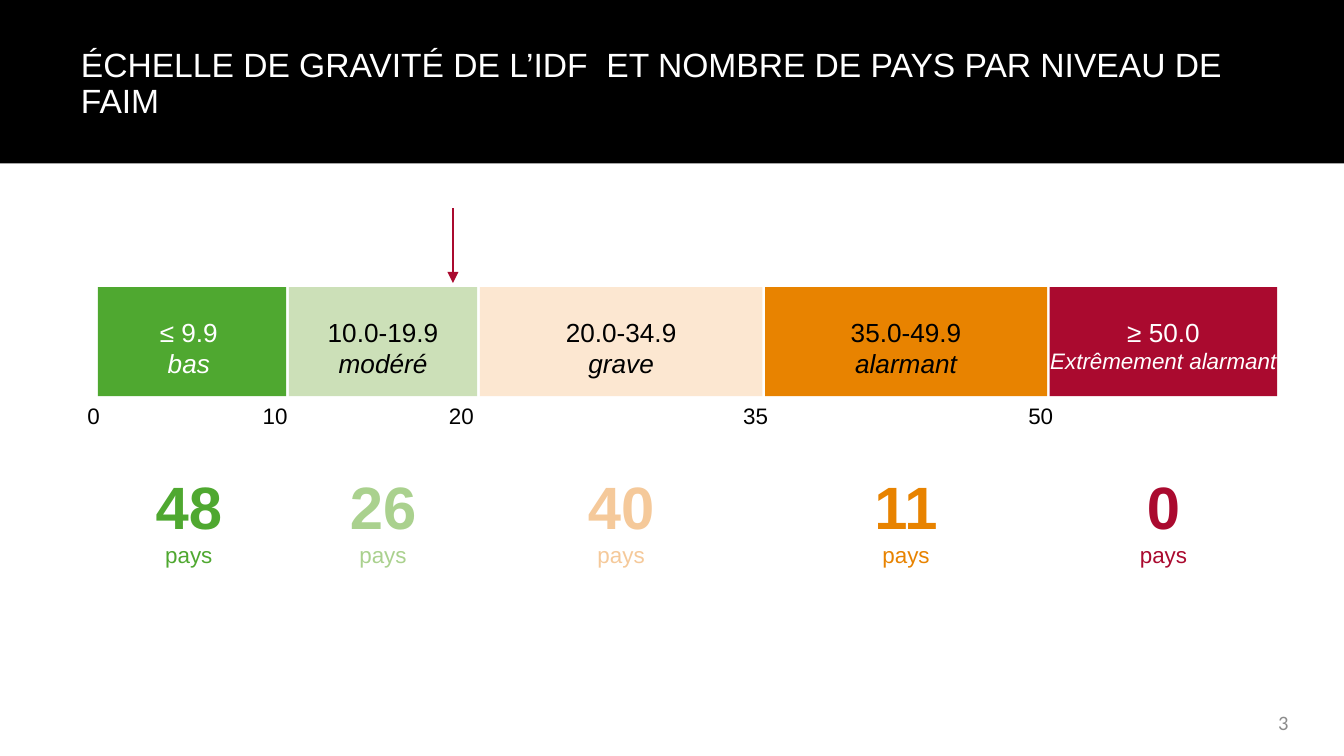
from dataclasses import dataclass

import pptx
import pptx.dml.color
import pptx.enum.shapes
import pptx.enum.text
import pptx.oxml
import pptx.oxml.ns
import pptx.util

Cm = pptx.util.Cm
Pt = pptx.util.Pt
RGBColor = pptx.dml.color.RGBColor
ALIGN = pptx.enum.text.PP_ALIGN
ANCHOR = pptx.enum.text.MSO_ANCHOR

BLACK = RGBColor(0x00, 0x00, 0x00)
WHITE = RGBColor(0xFF, 0xFF, 0xFF)
GRAY = RGBColor(0x8C, 0x8C, 0x8C)
GREEN = RGBColor(0x4F, 0xA8, 0x30)
PALE_GREEN = RGBColor(0xCC, 0xE0, 0xB8)
MID_GREEN = RGBColor(0xAA, 0xD1, 0x8E)
PEACH = RGBColor(0xFC, 0xE7, 0xD1)
DEEP_PEACH = RGBColor(0xF5, 0xC9, 0x9A)
ORANGE = RGBColor(0xE8, 0x83, 0x00)
CRIMSON = RGBColor(0xAA, 0x0A, 0x2F)

SLIDE_W, SLIDE_H = 25.4, 14.29
SCALE_LEFT, SCALE_TOP, BAND_H, GAP = 1.85, 5.43, 2.06, 0.05
LABEL_TOP, TICK_TOP, COUNT_TOP = 5.85, 7.48, 8.75


@dataclass
class Line:
    text: str
    size: int
    color: RGBColor
    bold: bool = False
    italic: bool = False
    font: str = "Arial"


@dataclass
class Band:
    width: float
    fill: RGBColor
    text_color: RGBColor
    range: str
    level: str
    level_size: int
    label_w: float
    start: str
    tick_x: float
    count: str
    count_color: RGBColor
    text_shift: float = 0


BANDS = [
    Band(3.56, GREEN, WHITE, "≤ 9.9", "bas", 14, 1.6, "0", 1.77, "48", GREEN,
         text_shift=-0.06),
    Band(3.56, PALE_GREEN, BLACK, "10.0-19.9", "modéré", 14, 3.89,
         "10", 5.2, "26", MID_GREEN),
    Band(5.34, PEACH, BLACK, "20.0-34.9", "grave", 14, 3.89,
         "20", 8.72, "40", DEEP_PEACH),
    Band(5.33, ORANGE, BLACK, "35.0-49.9", "alarmant", 14, 3.89,
         "35", 14.28, "11", ORANGE),
    Band(4.3, CRIMSON, WHITE, "≥ 50.0", "Extrêmement alarmant", 12, 4.83,
         "50", 19.67, "0", CRIMSON),
]


def add_rect(s, x: float, y: float, w: float, h: float, color: RGBColor) -> None:
    sp = s.shapes.add_shape(pptx.enum.shapes.MSO_SHAPE.RECTANGLE,
                            Cm(x), Cm(y), Cm(w), Cm(h))
    sp.shadow.inherit = False
    sp.fill.solid()
    sp.fill.fore_color.rgb = color
    sp.line.fill.background()


def add_text(s, x: float, y: float, w: float, h: float, lines: list[Line],
             align=ALIGN.CENTER, anchor=ANCHOR.TOP, wrap: bool = False,
             spacing: float = 1.0) -> None:
    tf = s.shapes.add_textbox(Cm(x), Cm(y), Cm(w), Cm(h)).text_frame
    tf.word_wrap = wrap
    tf.vertical_anchor = anchor
    for i, line in enumerate(lines):
        p = tf.add_paragraph() if i else tf.paragraphs[0]
        p.text = line.text
        p.alignment = align
        p.line_spacing = spacing
        p.font.name = line.font
        p.font.size = Pt(line.size)
        p.font.bold = line.bold
        p.font.italic = line.italic
        p.font.color.rgb = line.color


def add_centered(s, center: float, y: float, w: float, h: float,
                 lines: list[Line]) -> None:
    add_text(s, center - w / 2, y, w, h, lines)


def add_arrow(s, x: float, top: float, bottom: float, color: RGBColor) -> None:
    cx = s.shapes.add_connector(pptx.enum.shapes.MSO_CONNECTOR.STRAIGHT,
                                Cm(x), Cm(top), Cm(x), Cm(bottom))
    cx.line.color.rgb = color
    cx.line.width = Pt(1)
    ln = cx.line._get_or_add_ln()
    ln.append(pptx.oxml.parse_xml(
        f'<a:tailEnd {pptx.oxml.ns.nsdecls("a")} type="triangle"/>'))
    ln.getparent().append(pptx.oxml.parse_xml(
        f'<a:effectLst {pptx.oxml.ns.nsdecls("a")}/>'))


def add_scale(s) -> None:
    x = SCALE_LEFT
    for b in BANDS:
        center = x + b.width / 2 + b.text_shift
        add_rect(s, x, SCALE_TOP, b.width, BAND_H, b.fill)
        add_centered(s, center, LABEL_TOP, b.label_w, 1.45, [
            Line(b.range, 14, b.text_color),
            Line(b.level, b.level_size, b.text_color, italic=True)])
        add_centered(s, b.tick_x, TICK_TOP, 1, 0.76, [Line(b.start, 12, BLACK)])
        add_centered(s, center, COUNT_TOP, 1.78, 2.13, [
            Line(b.count, 32, b.count_color, bold=True),
            Line("pays", 12, b.count_color)])
        x += b.width + GAP


def main() -> None:
    prs = pptx.Presentation()
    prs.slide_width, prs.slide_height = Cm(SLIDE_W), Cm(SLIDE_H)
    s = prs.slides.add_slide(prs.slide_layouts[6])
    add_rect(s, 0, 0, SLIDE_W, 3.09, BLACK)
    title = "ÉCHELLE DE GRAVITÉ DE L’IDF  ET NOMBRE DE PAYS PAR NIVEAU DE FAIM"
    add_text(s, 1.28, 0.81, 22.86, 1.57, [Line(title, 18, WHITE)],
             ALIGN.LEFT, ANCHOR.MIDDLE, wrap=True, spacing=0.9)
    add_scale(s)
    add_arrow(s, 8.56, 3.94, 5.35, CRIMSON)
    add_text(s, 18.68, 13.28, 5.92, 0.76, [Line("3", 11, GRAY, font="Calibri")],
             ALIGN.RIGHT, ANCHOR.MIDDLE, wrap=True)
    prs.save("out.pptx")


if __name__ == "__main__":
    main()
